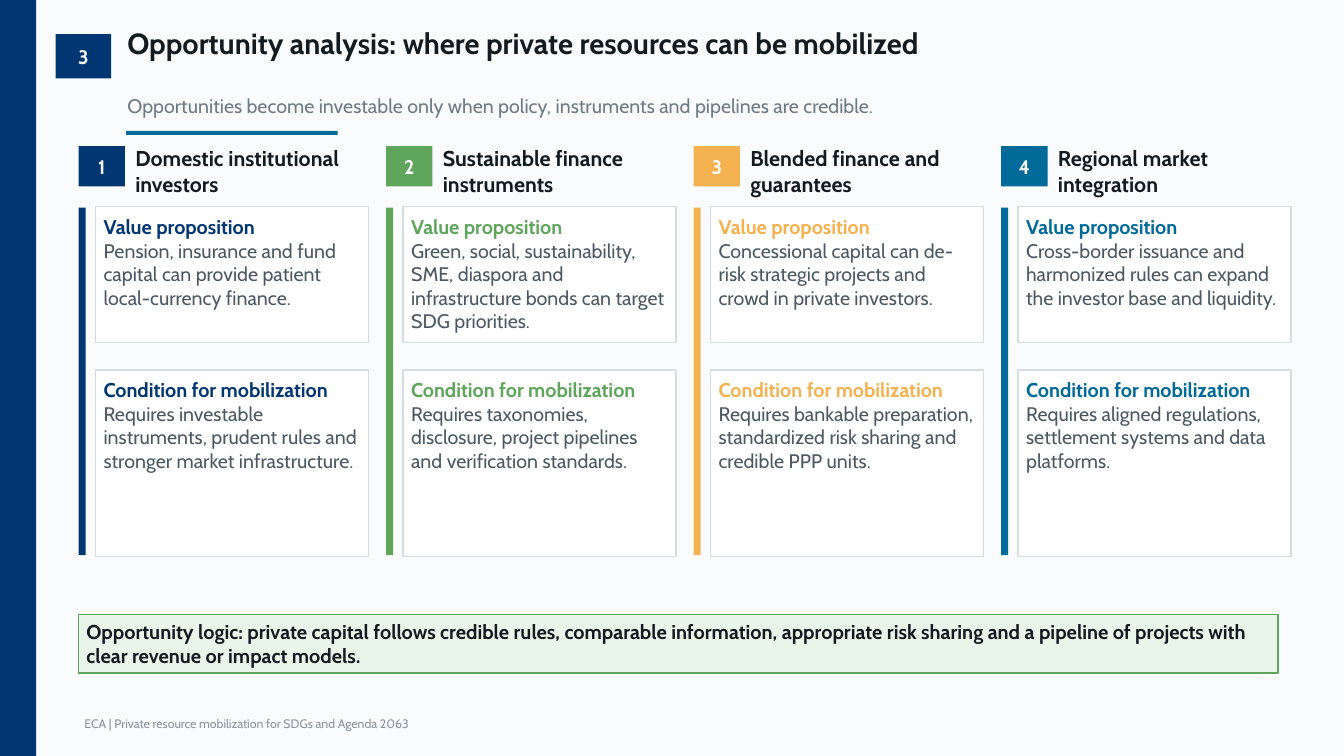
from pptx import Presentation
from pptx.dml.color import RGBColor
from pptx.enum import shapes, text
from pptx.util import Cm, Pt

# Content
TITLE = "Opportunity analysis: where private resources can be mobilized"
SUBTITLE = "Opportunities become investable only when policy, instruments and pipelines are credible."
SECTION = "3"
CARD_HEADINGS = ("Value proposition", "Condition for mobilization")
OPPORTUNITIES = [
    ("Domestic institutional investors", "003773",
     "Pension, insurance and fund capital can provide patient local-currency finance.",
     "Requires investable instruments, prudent rules and stronger market infrastructure."),
    ("Sustainable finance instruments", "5FA55C",
     "Green, social, sustainability, SME, diaspora and infrastructure bonds can target SDG priorities.",
     "Requires taxonomies, disclosure, project pipelines and verification standards."),
    ("Blended finance and guarantees", "F4B150",
     "Concessional capital can de-risk strategic projects and crowd in private investors.",
     "Requires bankable preparation, standardized risk sharing and credible PPP units."),
    ("Regional market integration", "006A98",
     "Cross-border issuance and harmonized rules can expand the investor base and liquidity.",
     "Requires aligned regulations, settlement systems and data platforms."),
]
LOGIC = ("Opportunity logic: private capital follows credible rules, comparable information, "
         "appropriate risk sharing and a pipeline of projects with clear revenue or impact models.")
FOOTER = "ECA | Private resource mobilization for SDGs and Agenda 2063"

# Style and layout, lengths in centimetres
FONT = "Cabin"
NAVY, TEAL, GREEN, WHITE = "003773", "006A98", "5FA55C", "FFFFFF"
INK, BODY, BORDER = "141B20", "4C5963", "D6DDE2"
SLIDE_WIDTH, SLIDE_HEIGHT = 33.87, 19.05
LEFT, COLUMN_PITCH = 1.98, 7.75
CARD_ROWS = ((5.21, 3.43), (9.32, 4.7))  # top, height
CENTER, MIDDLE = text.PP_ALIGN.CENTER, text.MSO_ANCHOR.MIDDLE

presentation = Presentation()
presentation.slide_width = Cm(SLIDE_WIDTH)
presentation.slide_height = Cm(SLIDE_HEIGHT)
slide = presentation.slides.add_slide(presentation.slide_layouts[6])


def color(value):
    return RGBColor.from_string(value)


def write(shape, lines, inset, anchor=text.MSO_ANCHOR.TOP, align=text.PP_ALIGN.LEFT):
    """Each line is (text, size, colour, bold) and becomes a paragraph."""
    frame = shape.text_frame
    frame.word_wrap = True
    frame.vertical_anchor = anchor
    frame.margin_left = frame.margin_right = Cm(inset)
    frame.margin_top = frame.margin_bottom = Cm(inset)
    for index, (words, size, ink, bold) in enumerate(lines):
        paragraph = frame.add_paragraph() if index else frame.paragraphs[0]
        paragraph.text = words
        paragraph.alignment = align
        paragraph.font.name = FONT
        paragraph.font.size = Pt(size)
        paragraph.font.bold = bold
        paragraph.font.color.rgb = color(ink)


def add_box(left, top, width, height, fill, line=None):
    shape = slide.shapes.add_shape(shapes.MSO_SHAPE.RECTANGLE,
                                   Cm(left), Cm(top), Cm(width), Cm(height))
    shape.shadow.inherit = False
    shape.fill.solid()
    shape.fill.fore_color.rgb = color(fill)
    if line:
        shape.line.color.rgb = color(line)
        shape.line.width = Pt(1)
    else:
        shape.line.fill.background()
    return shape


def add_label(left, top, width, height, line, inset=0.03):
    label = slide.shapes.add_textbox(Cm(left), Cm(top), Cm(width), Cm(height))
    write(label, [line], inset)


def add_badge(left, top, width, height, number, fill, inset):
    badge = add_box(left, top, width, height, fill)
    write(badge, [(number, 14, WHITE, True)], inset, MIDDLE, CENTER)


# Background, side band and header
slide.background.fill.solid()
slide.background.fill.fore_color.rgb = color("FAFBFC")
add_box(0, 0, 0.91, SLIDE_HEIGHT, NAVY)
add_badge(1.4, 0.86, 1.4, 1.12, SECTION, NAVY, 0.15)
add_label(3.18, 0.61, 29.59, 1.57, (TITLE, 20.8, INK, True))
add_label(3.18, 2.34, 29.08, 0.89, (SUBTITLE, 14, "6E7A84", False))
add_box(3.18, 3.3, 5.33, 0.1, TEAL)

# Four opportunity columns
for column, (name, accent, *details) in enumerate(OPPORTUNITIES):
    left = LEFT + column * COLUMN_PITCH
    add_badge(left, 3.68, 1.17, 1.02, str(column + 1), accent, 0.03)
    add_label(left + 1.4, 3.63, 5.92, 1.32, (name, 15.3, INK, True))
    add_box(left, 5.23, 0.18, 8.76, accent)
    for (top, height), heading, detail in zip(CARD_ROWS, CARD_HEADINGS, details):
        card = add_box(left + 0.43, top, 6.88, height, WHITE, BORDER)
        write(card, [(heading, 14.2, accent, True), (detail, 14, BODY, False)], 0.2)

# Concluding message and footer
callout = add_box(LEFT, 15.49, 30.23, 1.47, "EAF5EA", GREEN)
write(callout, [(LOGIC, 14.3, INK, True)], 0.2, MIDDLE)
add_label(LEFT, 17.91, 20.32, 0.64, (FOOTER, 8.8, "8A939B", False), 0.15)

presentation.save("out.pptx")
